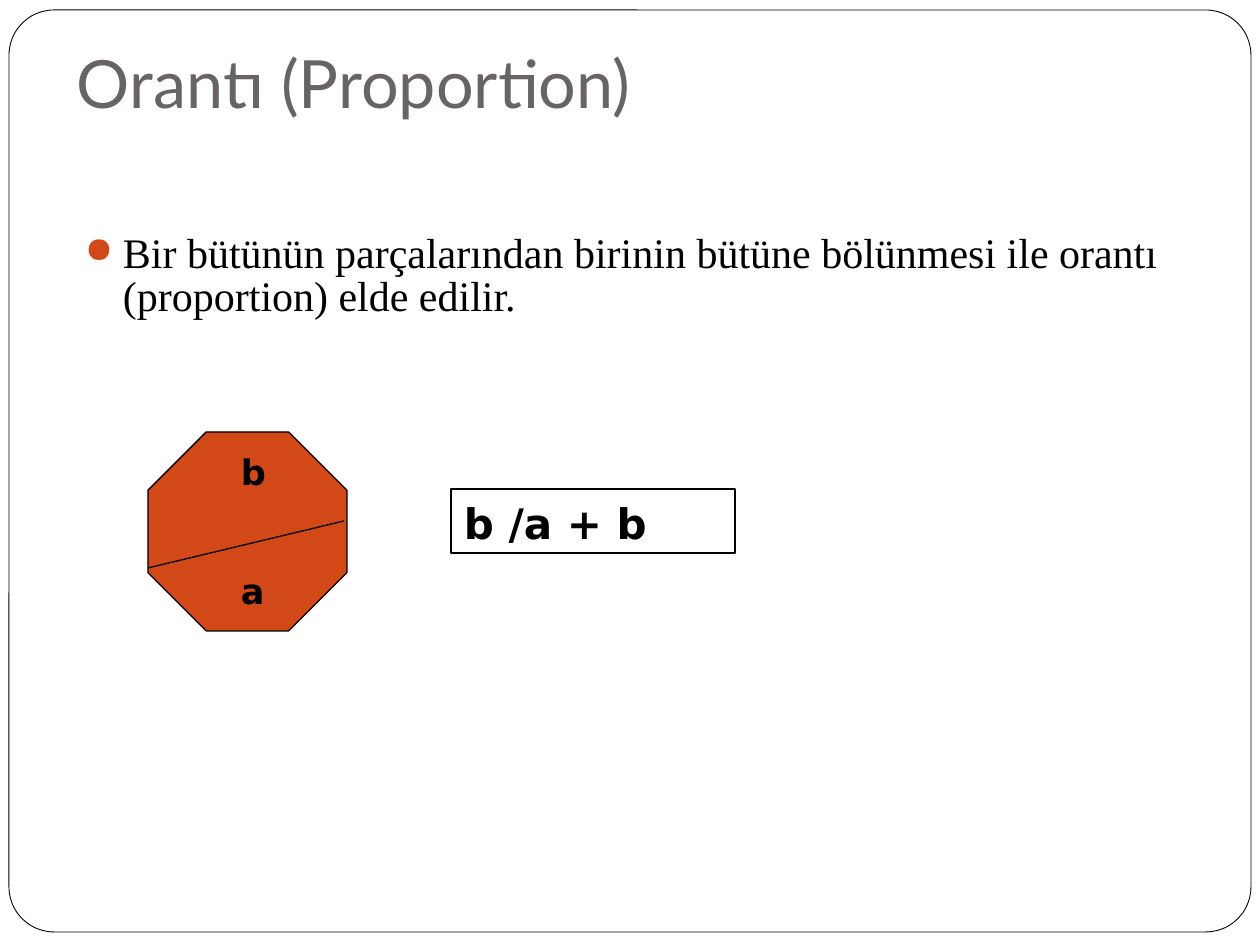
from lxml.etree import SubElement
from pptx import Presentation
from pptx.dml.color import RGBColor
from pptx.enum.shapes import MSO_CONNECTOR, MSO_SHAPE
from pptx.enum.text import MSO_ANCHOR, PP_ALIGN
from pptx.oxml.ns import qn
from pptx.util import Emu, Pt

PX = 914400 // 126
WHITE = RGBColor(0xFF, 0xFF, 0xFF)
BLACK = RGBColor(0, 0, 0)
GRAY = RGBColor(0x69, 0x64, 0x64)
ORANGE = RGBColor(0xD3, 0x48, 0x17)


def px(*lengths):
    return [Emu(length * PX) for length in lengths]


def write(holder, text, *, size, font, color=BLACK, bold=False, top=6, spacing=None):
    frame = holder.text_frame
    frame.word_wrap = True
    frame.vertical_anchor = MSO_ANCHOR.TOP
    frame.margin_left, frame.margin_right = px(13, 13)
    frame.margin_top, frame.margin_bottom = px(top, 6)
    paragraph = frame.paragraphs[0]
    paragraph.alignment = PP_ALIGN.LEFT
    paragraph.line_spacing = spacing
    run = paragraph.add_run()
    run.text = text
    run.font.size = Pt(size)
    run.font.name = font
    run.font.bold = bold
    run.font.color.rgb = color
    return paragraph


def add_outlined(slide, preset, box, fill=None, width=0.75, adjust=None):
    shape = slide.shapes.add_shape(preset, *px(*box))
    shape.shadow.inherit = False
    if fill is None:
        shape.fill.background()
    else:
        shape.fill.solid()
        shape.fill.fore_color.rgb = fill
    shape.line.color.rgb = BLACK
    shape.line.width = Pt(width)
    if adjust is not None:
        shape.adjustments[0] = adjust
    return shape


def add_bullet(paragraph, color, percent, indent):
    properties = paragraph._p.get_or_add_pPr()
    properties.set("marL", str(indent * PX))
    properties.set("indent", str(-indent * PX))
    bullet_color = SubElement(properties, qn("a:buClr"))
    SubElement(bullet_color, qn("a:srgbClr"), val=str(color))
    SubElement(properties, qn("a:buSzPct"), val=str(percent * 1000))
    SubElement(properties, qn("a:buChar"), char="●")


def add_title(slide, box):
    title = slide.shapes.title
    title.left, title.top, title.width, title.height = px(*box)
    write(title, "Orantı (Proportion)", size=38, font="Lato", color=GRAY)


def add_definition(slide, box):
    definition = slide.shapes.add_textbox(*px(*box))
    paragraph = write(
        definition,
        "Bir bütünün parçalarından birinin bütüne bölünmesi ile orantı "
        "(proportion) elde edilir.",
        size=24, font="Times New Roman", spacing=0.85)
    add_bullet(paragraph, ORANGE, percent=85, indent=38)


def add_divided_whole(slide, box):
    """Octagon cut by a slanted line into parts b (above) and a (below)."""
    left, top, width, height = box
    add_outlined(slide, MSO_SHAPE.OCTAGON, box, fill=ORANGE, adjust=0.293)
    divider = slide.shapes.add_connector(
        MSO_CONNECTOR.STRAIGHT,
        *px(left, top + 136, left + width - 3, top + 89))
    divider.line.color.rgb = BLACK
    divider.line.width = Pt(0.75)
    SubElement(divider._element.spPr, qn("a:effectLst"))
    for part, offset, label_width in (("a", 129, 107), ("b", 10, 63)):
        label = slide.shapes.add_textbox(
            *px(left + 80, top + offset, label_width, 54))
        write(label, part, size=20, font="DejaVu Sans", bold=True, top=9)


def add_formula(slide, box):
    formula = add_outlined(slide, MSO_SHAPE.RECTANGLE, box)
    write(formula, "b /a + b", size=24, font="DejaVu Sans", bold=True, top=9)


def main():
    deck = Presentation()
    deck.slide_width, deck.slide_height = px(1260, 945)
    slide = deck.slides.add_slide(deck.slide_layouts[5])
    frame = add_outlined(slide, MSO_SHAPE.ROUNDED_RECTANGLE, (9, 10, 1242, 922),
                         fill=WHITE, width=0.5, adjust=0.049)
    # The frame goes behind the title
    slide.shapes.title._element.addprevious(frame._element)
    add_title(slide, (64, 36, 1134, 77))
    add_definition(slide, (72, 228, 1134, 651))
    add_divided_whole(slide, (148, 432, 199, 199))
    add_formula(slide, (451, 489, 284, 64))
    deck.save("out.pptx")


if __name__ == "__main__":
    main()
